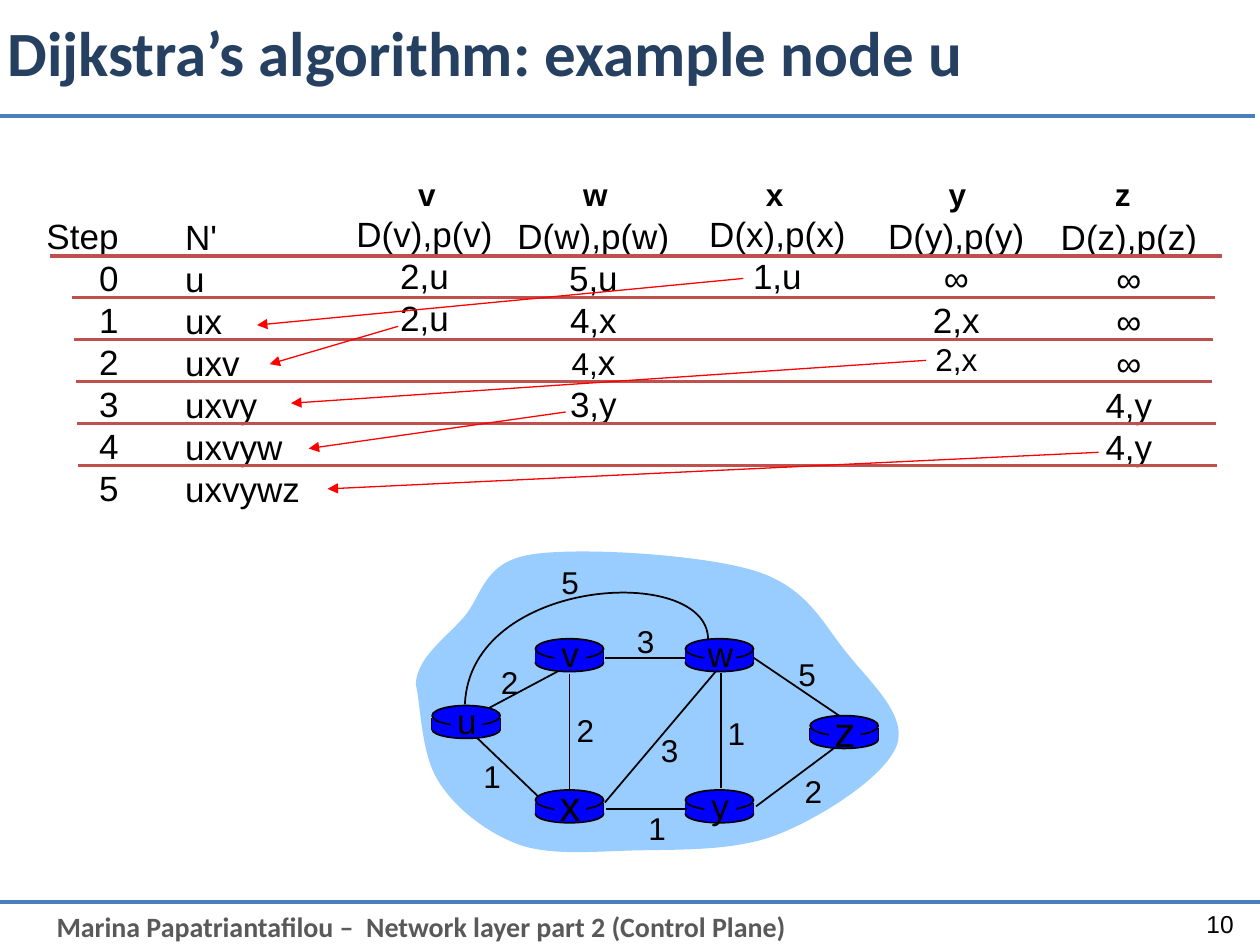
from lxml import etree
from pptx import Presentation
from pptx.dml.color import RGBColor
from pptx.enum.shapes import MSO_CONNECTOR, MSO_SHAPE
from pptx.enum.text import MSO_ANCHOR, PP_ALIGN
from pptx.oxml.ns import qn
from pptx.util import Inches, Pt

LEFT, CENTER, RIGHT = PP_ALIGN.LEFT, PP_ALIGN.CENTER, PP_ALIGN.RIGHT
MIDDLE = MSO_ANCHOR.MIDDLE
STRAIGHT = MSO_CONNECTOR.STRAIGHT
ELLIPSE, RECTANGLE = MSO_SHAPE.OVAL, MSO_SHAPE.RECTANGLE

BLACK = RGBColor(0x00, 0x00, 0x00)
NAVY = RGBColor(0x25, 0x40, 0x61)
GRAY = RGBColor(0x59, 0x59, 0x59)
RULE_BLUE = RGBColor(0x4B, 0x7E, 0xBC)
BRICK = RGBColor(0xC0, 0x50, 0x4D)
RED = RGBColor(0xFF, 0x00, 0x00)
ROUTER_BLUE = RGBColor(0x00, 0x00, 0xFF)
CLOUD_BLUE = RGBColor(0x99, 0xCC, 0xFF)

TITLE = "Dijkstra’s algorithm: example node u"
FOOTER = "Marina Papatriantafilou –  Network layer part 2 (Control Plane)"
PAGE_NUMBER = "10"

# Table columns: left, top, width, alignment, rows; a row is a list of (text, size)
COLUMNS = [
    (0.26, 1.65, 0.78, RIGHT, ["Step", "0", "1", "2", "3", "4", "5"]),
    (1.37, 1.66, 1.11, LEFT, ["N'", "u", "ux", "uxv", "uxvy", "uxvyw", "uxvywz"]),
    (2.72, 1.64, 1.3, CENTER, ["D(v),p(v)", "2,u", "2,u"]),
    (3.98, 1.65, 1.46, CENTER,
     ["D(w),p(w)", "5,u", "4,x", [("4,", 18), ("x", 20)], "3,y"]),
    (5.52, 1.64, 1.3, CENTER, ["D(x),p(x)", "1,u"]),
    (6.94, 1.65, 1.3, CENTER, ["D(y),p(y)", "∞", "2,x", [("2,x", 18)]]),
    (8.31, 1.66, 1.3, CENTER, ["D(z),p(z)", "∞", "∞", "∞", "4,y", "4,y"]),
]
LINE_PITCH = 1.2
DESTINATIONS = ["v", "w", "x", "y", "z"]
DESTINATION_TABS = [1.31, 2.76, 4.21, 5.53]

ROW_RULES = [(0.4, 9.7), (0.57, 9.64), (0.59, 9.63),
             (0.6, 9.62), (0.61, 9.65), (0.62, 9.66)]
FIRST_RULE, RULE_GAP = 2.03, 1 / 3
CHOICES = [  # from the chosen distance to the node set it extends
    ((5.9, 2.21), (2.04, 2.58)),
    ((3.16, 2.59), (2.14, 2.89)),
    ((7.35, 2.86), (2.31, 3.2)),
    ((4.49, 3.27), (2.45, 3.56)),
    ((8.72, 3.59), (2.6, 3.88)),
]

# Network: node name, left and top of its router, label size
ROUTERS = [("u", 3.43, 5.6, 20), ("x", 4.25, 6.27, 24), ("v", 4.25, 5.07, 20),
           ("w", 5.44, 5.07, 20), ("y", 5.44, 6.27, 20), ("z", 6.43, 5.68, 24)]
HIDDEN_LINK = ((3.88, 5.62), (4.48, 5.3))
LINKS = [
    ((5.72, 5.34), (5.72, 6.25)), ((4.52, 5.35), (4.52, 6.28)),
    ((4.8, 6.37), (5.68, 5.33)), ((6, 6.4), (6.63, 5.93)),
    ((5.45, 6.42), (4.81, 6.42)), ((4.27, 6.32), (3.79, 5.86)),
    ((5.44, 5.22), (4.8, 5.22)), ((6.66, 5.68), (5.98, 5.22)),
]
COSTS = [("2", 3.87, 5.21), ("2", 4.47, 5.59), ("1", 3.73, 5.96), ("3", 5.14, 5.75),
         ("1", 5.04, 6.37), ("1", 5.67, 5.62), ("2", 6.28, 6.08), ("5", 6.23, 5.15),
         ("3", 4.95, 4.89), ("5", 4.35, 4.42)]
# Curves: a start point, then two control points and an end point per piece
CLOUD = [
    (3.3, 5.43), (3.31, 5.22), (3.53, 5.07), (3.68, 4.9),
    (3.83, 4.73), (3.83, 4.46), (4.22, 4.4), (4.6, 4.34), (5.57, 4.4), (5.99, 4.53),
    (6.41, 4.66), (6.53, 4.95), (6.72, 5.18), (6.9, 5.41), (7.2, 5.67), (7.12, 5.91),
    (7.03, 6.16), (6.53, 6.48), (6.18, 6.62), (5.83, 6.76), (5.37, 6.74), (5.02, 6.75),
    (4.68, 6.76), (4.36, 6.79), (4.11, 6.7), (3.85, 6.6), (3.61, 6.41), (3.48, 6.2),
    (3.34, 5.98), (3.34, 5.59), (3.3, 5.43),
]
ARC = [(5.62, 5.07), (5.61, 4.47), (3.73, 4.58), (3.69, 5.59)]


def add_span(para, text, size, color=BLACK, font="Arial", bold=False):
    span = para.add_run()
    span.text = text
    span.font.name, span.font.size, span.font.bold = font, Pt(size), bold
    span.font.color.rgb = color


def add_box(page, left, top, width, height, align=LEFT, wrap=False):
    """Add a text box and return its text frame."""
    frame = page.shapes.add_textbox(
        Inches(left), Inches(top), Inches(width), Inches(height)).text_frame
    frame.word_wrap = wrap
    frame.paragraphs[0].alignment = align
    return frame


def add_line(page, start, end, color, width, arrow=False):
    line = page.shapes.add_connector(STRAIGHT, *(Inches(v) for v in (*start, *end)))
    line.line.color.rgb, line.line.width = color, Pt(width)
    if arrow:
        etree.SubElement(line.line._get_or_add_ln(), qn("a:tailEnd"), type="triangle")
    etree.SubElement(line._element.spPr, qn("a:effectLst"))


def paint(shape, fill=None, outline=None):
    shape.shadow.inherit = False
    if fill is None:
        shape.fill.background()
    else:
        shape.fill.solid()
        shape.fill.fore_color.rgb = fill
    if outline is None:
        shape.line.fill.background()
    else:
        shape.line.color.rgb, shape.line.width = outline, Pt(1)


def add_shape(page, kind, left, top, width, height, fill, outline=None):
    shape = page.shapes.add_shape(
        kind, Inches(left), Inches(top), Inches(width), Inches(height))
    paint(shape, fill, outline)


def add_curve(page, points, closed, fill=None, outline=None):
    """Build a freeform through all points, then turn each three segments into a Bezier."""
    start, *rest = [(Inches(x), Inches(y)) for x, y in points]
    builder = page.shapes.build_freeform(*start)
    builder.add_line_segments(rest, close=closed)
    shape = builder.convert_to_shape()
    segments = list(shape._element.iter(qn("a:lnTo")))
    for first in range(0, len(rest), 3):
        piece = segments[first:first + 3]
        curve = etree.Element(qn("a:cubicBezTo"))
        piece[0].addprevious(curve)
        for segment in piece:
            curve.append(segment[0])
            segment.getparent().remove(segment)
    paint(shape, fill, outline)


def add_router(page, left, top):
    add_shape(page, ELLIPSE, left, top + 0.12, 0.54, 0.14, ROUTER_BLUE, BLACK)
    for side in (left, left + 0.54):
        add_line(page, (side, top + 0.1), (side, top + 0.19), BLACK, 1)
    add_shape(page, RECTANGLE, left, top + 0.1, 0.54, 0.09, ROUTER_BLUE)
    add_shape(page, ELLIPSE, left, top, 0.54, 0.16, ROUTER_BLUE, BLACK)


def add_frame(page):
    """Title, page rules, footer and page number."""
    for left, y in ((0, 7.16), (-0.04, 0.92)):
        add_line(page, (left, y), (left + 10, y), RULE_BLUE, 2.25)
    footer = add_box(page, 0.35, 7.17, 9.25, 0.37, wrap=True)
    add_span(footer.paragraphs[0], FOOTER, 16, GRAY, "Calibri", True)
    number = add_box(page, 9.09, 7.13, 0.8, 0.4, RIGHT, wrap=True)
    number.vertical_anchor = MIDDLE
    add_span(number.paragraphs[0], PAGE_NUMBER, 14)
    title = page.shapes.title
    title.left, title.top = Inches(-0.04), Inches(0.05)
    title.width, title.height = Inches(8.99), Inches(0.71)
    title.text_frame.vertical_anchor = MIDDLE
    title.text_frame.paragraphs[0].alignment = LEFT
    add_span(title.text_frame.paragraphs[0], TITLE, 36, NAVY, "Calibri", True)


def add_steps(page):
    for left, top, width, align, rows in COLUMNS:
        frame = add_box(page, left, top, width, 0.1 + len(rows) / 3, align)
        for index, row in enumerate(rows):
            para = frame.add_paragraph() if index else frame.paragraphs[0]
            para.alignment = align
            spans = [(row, 20)] if isinstance(row, str) else row
            para.line_spacing = Pt(LINE_PITCH * max(size for _, size in spans))
            for text, size in spans:
                add_span(para, text, size)
    for index, (left, right) in enumerate(ROW_RULES):
        y = FIRST_RULE + index * RULE_GAP
        add_line(page, (left, y), (right, y), BRICK, 1.5 if index else 2.25)


def add_network(page):
    add_curve(page, CLOUD, True, fill=CLOUD_BLUE)
    add_line(page, *HIDDEN_LINK, BLACK, 1)
    for _, left, top, _ in ROUTERS:
        add_router(page, left, top)
    for start, end in LINKS:
        add_line(page, start, end, BLACK, 1)
    add_curve(page, ARC, False, outline=BLACK)
    for name, left, top, size in ROUTERS:
        add_shape(page, RECTANGLE, left + 0.15, top + 0.02, 0.25, 0.23, ROUTER_BLUE)
        height = 0.1 + LINE_PITCH * size / 72
        label = add_box(page, left + 0.08, top + 0.12 - height / 2, 0.39, height, CENTER)
        add_span(label.paragraphs[0], name, size)
    for cost, left, top in COSTS:
        add_span(add_box(page, left, top, 0.35, 0.4, CENTER).paragraphs[0], cost, 18)


def add_destinations(page):
    para = add_box(page, 3.22, 1.34, 6.17, 0.4, wrap=True).paragraphs[0]
    tabs = etree.SubElement(para._p.get_or_add_pPr(), qn("a:tabLst"))
    for position in DESTINATION_TABS:
        etree.SubElement(tabs, qn("a:tab"), pos=str(Inches(position)), algn="l")
    add_span(para, "\t".join(DESTINATIONS), 18, bold=True)


def main():
    deck = Presentation()
    deck.slide_width, deck.slide_height = Inches(10), Inches(7.5)
    page = deck.slides.add_slide(deck.slide_layouts[5])
    add_frame(page)
    add_steps(page)
    add_network(page)
    for start, end in CHOICES:
        add_line(page, start, end, RED, 0.75, arrow=True)
    add_destinations(page)
    deck.save("out.pptx")


if __name__ == "__main__":
    main()
